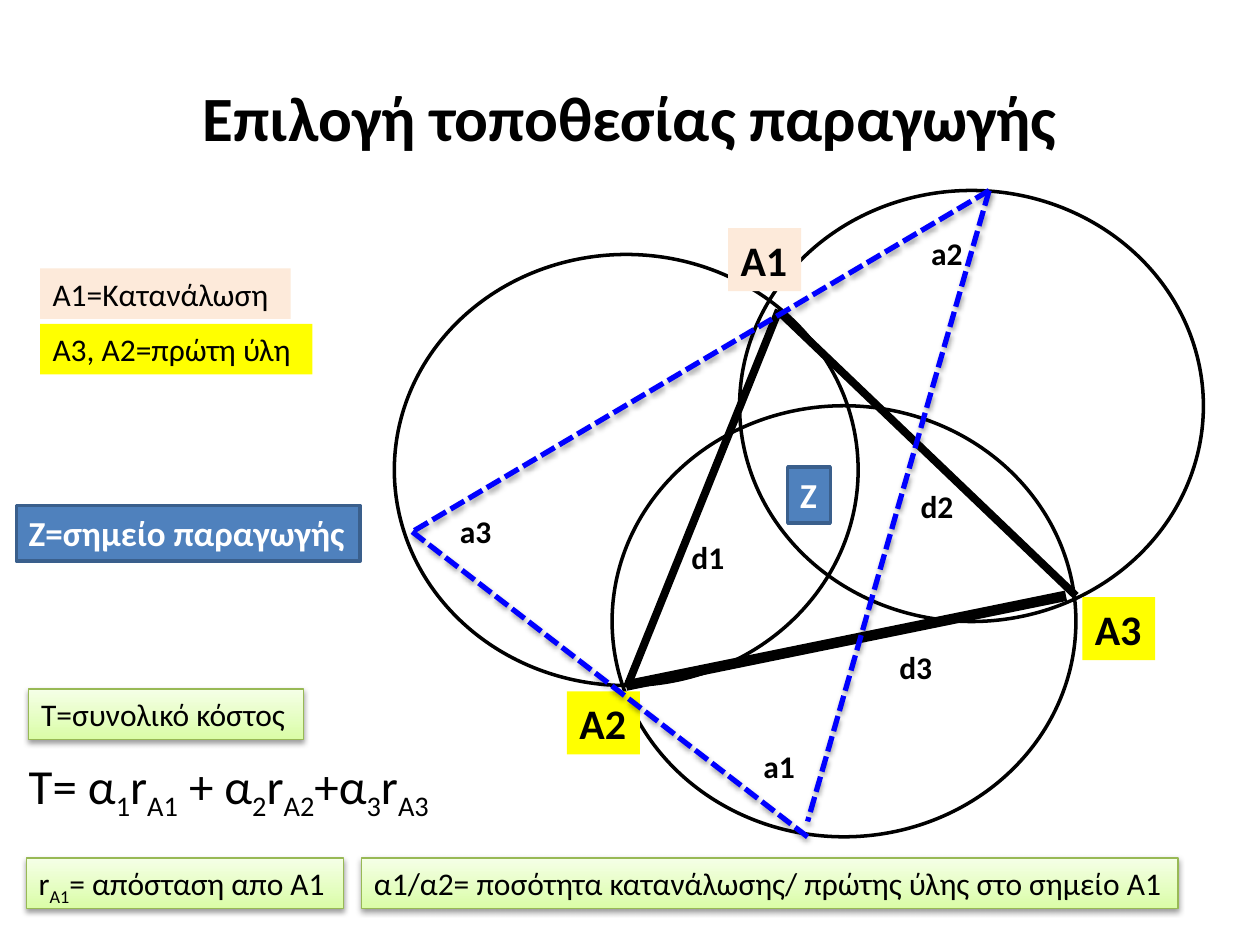
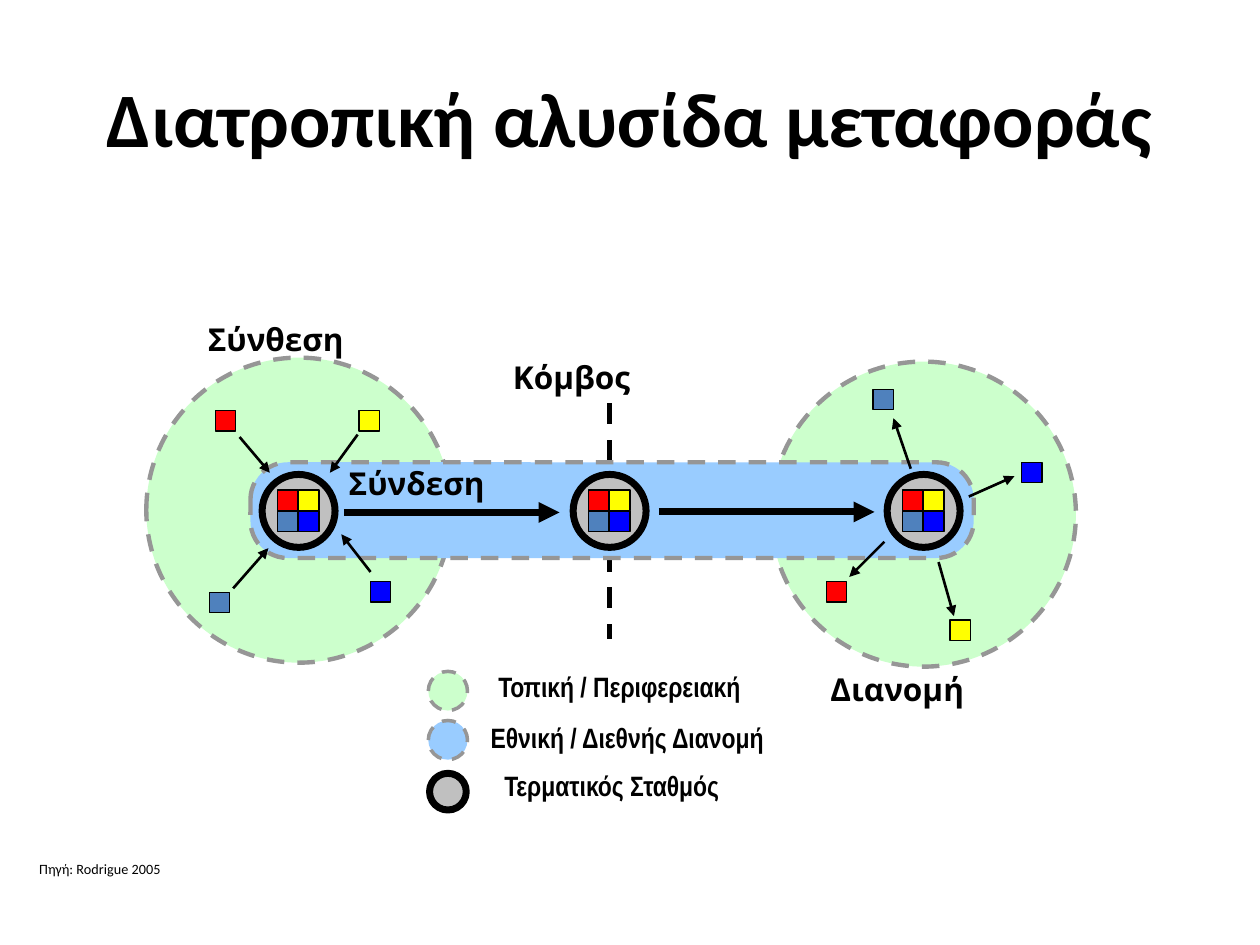
from itertools import product
from lxml.etree import SubElement
from pptx import Presentation
from pptx.dml.color import RGBColor
from pptx.enum.dml import MSO_LINE as Dash
from pptx.enum.shapes import MSO_CONNECTOR, MSO_SHAPE as Kind
from pptx.enum.text import MSO_ANCHOR, MSO_AUTO_SIZE, PP_ALIGN as Align
from pptx.oxml.ns import qn
from pptx.util import Cm, Pt

BLACK = RGBColor(0x00, 0x00, 0x00)
WHITE = RGBColor(0xFF, 0xFF, 0xFF)
RED = RGBColor(0xFF, 0x00, 0x00)
YELLOW = RGBColor(0xFF, 0xFF, 0x00)
BLUE = RGBColor(0x00, 0x00, 0xFF)
STEEL = RGBColor(0x4F, 0x81, 0xBD)
STEEL_EDGE = RGBColor(0x3A, 0x5F, 0x8C)
PEACH = RGBColor(0xFD, 0xEA, 0xDA)
LIME = RGBColor(0xDA, 0xFD, 0xA7)
PALE_LIME = RGBColor(0xF5, 0xFF, 0xE7)
LIME_EDGE = RGBColor(0x98, 0xB9, 0x55)
MINT = RGBColor(0xCC, 0xFF, 0xCC)
SKY = RGBColor(0x99, 0xCC, 0xFF)
SILVER = RGBColor(0xC0, 0xC0, 0xC0)
GREY = RGBColor(0x96, 0x96, 0x96)

BODY, LABEL, NARROW = "Calibri", "Noto Sans", "Arial Narrow"
SUBSCRIPT = -25

LOCATION_TITLE = "Eπιλογή τοποθεσίας παραγωγής"
CIRCLE_SIZE = (9.35, 8.69)
CIRCLES = [(14.91, 3.84), (7.95, 5.13), (12.34, 8.18)]
TRIANGLE_SIDES = [
    ((12.65, 13.82), (15.7, 6.25), 4.5),
    ((21.49, 12.01), (12.62, 13.82), 6),
    ((21.69, 12.01), (15.67, 6.25), 4.5),
]
OUTER_SIDES = [
    ((19.94, 3.84), (8.31, 10.72)),
    ((16.28, 16.87), (8.31, 10.72)),
    ((19.94, 3.84), (16.28, 16.56)),
]
CORNERS = [
    ("Α2", 11.43, 13.94, YELLOW),
    ("Α3", 21.82, 12.04, YELLOW),
    ("Α1", 14.68, 4.6, PEACH),
]
SIDE_LABELS = [
    ("d1", 13.69, 10.72), ("d2", 18.31, 9.7), ("d3", 17.88, 12.93),
    ("a1", 15.14, 14.94), ("a2", 18.52, 4.6), ("a3", 9.02, 10.19),
]
CORNER_KEY = [
    ("Α1=Kατανάλωση", (0.81, 5.41, 5.05, 1.02), PEACH),
    ("Α3, Α2=πρώτη ύλη", (0.81, 6.53, 5.49, 1.02), YELLOW),
]
PRODUCTION_TAGS = [
    ("Z", (15.88, 9.42, 0.86, 1.12)),
    ("Z=σημείο παραγωγής", (0.33, 10.19, 6.93, 1.12)),
]
FORMULA = ["Τ= α", ("1",), "r", ("A1",), " + α", ("2",), "r", ("A2",),
           "+α", ("3",), "r", ("A3",)]
DEFINITIONS = [
    (["T=συνολικό κόστος"], (0.58, 13.89, 5.54, 1.02)),
    (["r", ("A1",), "= απόσταση απο Α1"], (0.53, 17.3, 6.4, 1.02)),
    (["α1/α2= ποσότητα κατανάλωσης/ πρώτης ύλης στο σημείο Α1"],
     (7.29, 17.3, 16.46, 1.02)),
]

CHAIN_TITLE = "Διατροπική αλυσίδα μεταφοράς"
REGION_SIZE, TERMINAL_SIZE, PARCEL_SIZE, PARCEL_PITCH = 6.15, 1.47, 0.41, 0.42
REGIONS = [(15.54, 7.29), (2.95, 7.21)]
BAND = (5.05, 9.32, 14.58, 1.93)
HUB_LINE = ((12.29, 8.13), (12.29, 12.88))
TERMINALS = [6.02, 12.29, 18.62]
TERMINAL_Y = 10.3
PARCELS = [RED, YELLOW, STEEL, BLUE]
LOOSE_PARCELS = [
    (STEEL, 4.22, 11.94), (RED, 4.34, 8.28), (YELLOW, 7.24, 8.28),
    (BLUE, 7.47, 11.73), (STEEL, 17.6, 7.85), (RED, 16.66, 11.73),
    (YELLOW, 19.15, 12.5), (BLUE, 20.6, 9.32),
]
PARCEL_MOVES = [
    ((4.7, 11.86), (5.41, 11.05)), ((4.83, 8.81), (5.44, 9.53)),
    ((7.21, 8.76), (6.65, 9.53)), ((7.47, 11.53), (6.88, 10.77)),
    ((18.92, 11.33), (19.23, 12.42)), ((17.83, 10.92), (17.12, 11.63)),
    ((18.36, 9.45), (18.01, 8.43)), ((19.53, 10.01), (20.45, 9.6)),
]
LINKS = [((6.93, 10.33), (11.28, 10.33)), ((13.28, 10.32), (17.63, 10.32))]
STAGES = [
    ("Σύνθεση", (4.19, 6.45, 2.79, 0.74), 0),
    ("Σύνδεση", (6.93, 9.35, 3.18, 1.02), 0.1),
    ("Κόμβος", (10.24, 7.21, 2.92, 1.02), 0.1),
    ("Διανομή", (16.74, 13.51, 2.84, 0.74), 0),
]
KEY_X = 9.03
KEY = [
    ("Τοπική / Περιφερειακή", (9.8, 13.49, 5.38, 0.91), 13.93, 0.79,
     MINT, GREY, 2, Dash.DASH),
    ("Εθνική / Διεθνής Διανομή", (9.65, 14.53, 5.99, 0.91), 14.92, 0.79,
     SKY, GREY, 2, Dash.DASH),
    ("Τερματικός Σταθμός", (9.91, 15.49, 4.85, 0.91), 15.96, 0.74,
     SILVER, BLACK, 4, None),
]
SOURCE = "Πηγή: Rodrigue 2005"


def set_line(line, color, width, dash=None):
    line.color.rgb = color
    line.width = Pt(width)
    if dash:
        line.dash_style = dash


def add_effects(shape, shadow):
    effects = SubElement(shape._element.spPr, qn("a:effectLst"))
    if shadow:
        outer = SubElement(effects, qn("a:outerShdw"), blurRad="40000", dist="20000",
                           dir="5400000", rotWithShape="0")
        color = SubElement(outer, qn("a:srgbClr"), val="000000")
        SubElement(color, qn("a:alpha"), val="38000")


def add_line(page, start, end, color, width, dash=None, shadow=False, arrow=False):
    line = page.shapes.add_connector(
        MSO_CONNECTOR.STRAIGHT, *(Cm(value) for value in start + end))
    set_line(line.line, color, width, dash)
    if arrow:
        SubElement(line.line._get_or_add_ln(), qn("a:tailEnd"), type="triangle")
    add_effects(line, shadow)


def add_shape(page, kind, place, fill, color, width, dash=None):
    shape = page.shapes.add_shape(kind, *(Cm(value) for value in place))
    shape.shadow.inherit = False
    if fill is None:
        shape.fill.background()
    else:
        shape.fill.solid()
        shape.fill.fore_color.rgb = fill
    set_line(shape.line, color, width, dash)
    return shape


def add_disc(page, x, y, size, *style):
    add_shape(page, Kind.OVAL, (x - size / 2, y - size / 2, size, size), *style)


def add_parcel(page, x, y, color):
    add_shape(page, Kind.RECTANGLE, (x, y, PARCEL_SIZE, PARCEL_SIZE), color, BLACK, 0.75)


def write(para, parts, size, font=BODY, color=BLACK, bold=False, shift=SUBSCRIPT):
    for part in parts:
        lowered = isinstance(part, tuple)
        span = para.add_run()
        span.text = part[0] if lowered else part
        span.font.name = font
        span.font.size = Pt(size)
        span.font.bold = bold
        span.font.color.rgb = color
        if lowered:
            span._r.get_or_add_rPr().set("baseline", str(shift * 1000))


def add_text(page, parts, place, size, fill=None, inset=None, align=Align.LEFT, **style):
    box = page.shapes.add_textbox(*(Cm(value) for value in place))
    frame = box.text_frame
    frame.word_wrap = False
    frame.auto_size = MSO_AUTO_SIZE.SHAPE_TO_FIT_TEXT
    if inset is not None:
        frame.margin_left = frame.margin_right = Cm(inset)
        frame.margin_top = frame.margin_bottom = 0
    if fill is not None:
        box.fill.solid()
        box.fill.fore_color.rgb = fill
    para = frame.paragraphs[0]
    para.alignment = align
    write(para, parts, size, **style)
    return box


def add_page(deck, title, size):
    page = deck.slides.add_slide(deck.slide_layouts[5])
    box = page.shapes.title
    box.left, box.top, box.width, box.height = Cm(1.27), Cm(0.76), Cm(22.86), Cm(3.18)
    box.text_frame.vertical_anchor = MSO_ANCHOR.MIDDLE
    para = box.text_frame.paragraphs[0]
    para.alignment = Align.CENTER
    write(para, [title], size, bold=True)
    return page


def build_location(deck):
    page = add_page(deck, LOCATION_TITLE, 36)
    for corner in CIRCLES:
        add_shape(page, Kind.OVAL, corner + CIRCLE_SIZE, None, BLACK, 2)
    for start, end, width in TRIANGLE_SIDES:
        add_line(page, start, end, BLACK, width)
    for name, x, y, fill in CORNERS:
        add_text(page, [name], (x, y, 1.47, 1.27), 24, fill, bold=True)
    for start, end in OUTER_SIDES:
        add_line(page, start, end, BLUE, 3, Dash.SQUARE_DOT, shadow=True)
    for name, x, y in SIDE_LABELS:
        add_text(page, [name], (x, y, 1.17, 1.02), 18, bold=True)
    for text, place, fill in CORNER_KEY:
        add_text(page, [text], place, 18, fill)
    for text, place in PRODUCTION_TAGS:
        box = add_text(page, [text], place, 20, STEEL, color=WHITE, bold=True)
        set_line(box.line, STEEL_EDGE, 2)
    add_text(page, FORMULA, (0.33, 15.11, 9.09, 1.45), 28)
    for parts, place in DEFINITIONS:
        box = add_text(page, parts, place, 18)
        box.fill.gradient()
        box.fill.gradient_angle = 90
        for stop, color in zip(box.fill.gradient_stops, (LIME, PALE_LIME)):
            stop.color.rgb = color
        set_line(box.line, LIME_EDGE, 0.75)
        add_effects(box, shadow=True)


def build_chain(deck):
    page = add_page(deck, CHAIN_TITLE, 44)
    for corner in REGIONS:
        add_shape(page, Kind.OVAL, corner + (REGION_SIZE, REGION_SIZE),
                  MINT, GREY, 2.5, Dash.DASH)
    add_line(page, *HUB_LINE, BLACK, 3, Dash.DASH)
    band = add_shape(page, Kind.ROUNDED_RECTANGLE, BAND, SKY, GREY, 2.5, Dash.DASH)
    band.adjustments[0] = 0.39
    for x in TERMINALS:
        add_disc(page, x, TERMINAL_Y, TERMINAL_SIZE, SILVER, BLACK, 4)
        for (row, column), color in zip(product((-1, 0), repeat=2), PARCELS):
            add_parcel(page, x + column * PARCEL_PITCH,
                       TERMINAL_Y + row * PARCEL_PITCH, color)
    for color, x, y in LOOSE_PARCELS:
        add_parcel(page, x, y, color)
    for start, end in PARCEL_MOVES:
        add_line(page, start, end, BLACK, 1.5, arrow=True)
    for start, end in LINKS:
        add_line(page, start, end, BLACK, 4, arrow=True)
    for text, place, inset in STAGES:
        add_text(page, [text], place, 18, inset=inset, font=LABEL, bold=True)
    for text, place, y, size, *style in KEY:
        add_disc(page, KEY_X, y, size, *style)
        add_text(page, [text], place, 16, inset=0.1, align=Align.CENTER,
                 font=NARROW, bold=True)
    add_text(page, [(SOURCE,)], (0.69, 16.92, 3.3, 1.02), 14, inset=0.1, shift=-44)


def main():
    deck = Presentation()
    deck.slide_width, deck.slide_height = Cm(25.4), Cm(19.05)
    build_location(deck)
    build_chain(deck)
    deck.save("out.pptx")


if __name__ == "__main__":
    main()
